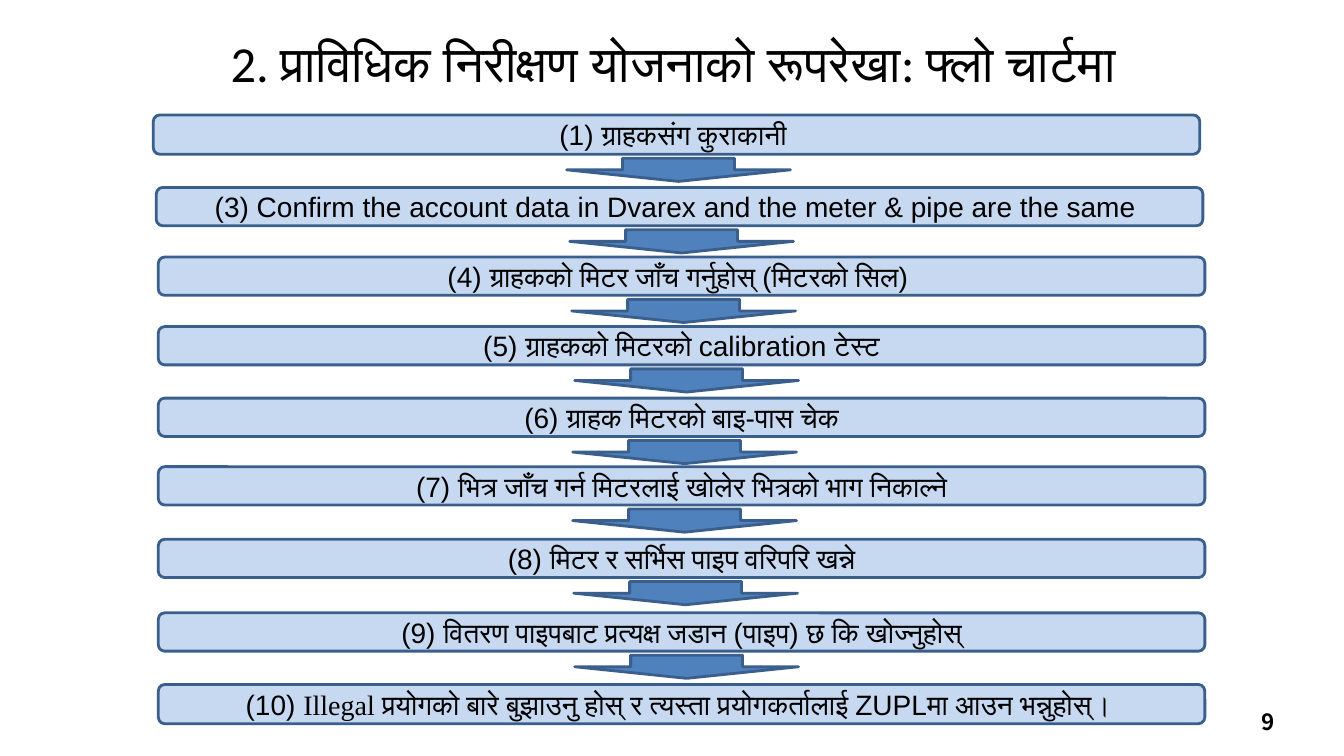
import pptx
import pptx.util
import pptx.dml.color
import pptx.enum.shapes
import pptx.enum.text

Inches = pptx.util.Inches
Pt = pptx.util.Pt
ALIGN = pptx.enum.text.PP_ALIGN
SHAPE = pptx.enum.shapes.MSO_SHAPE

COLOURS = {"text": "000000", "step": "C6D9F1", "arrow": "4F81BD", "outline": "3A5F8C"}


def add_block(kind, left, top, width, height, fill):
    block = page.shapes.add_shape(kind, Inches(left), Inches(top), Inches(width), Inches(height))
    block.shadow.inherit = False
    block.fill.solid()
    block.fill.fore_color.rgb = pptx.dml.color.RGBColor.from_string(COLOURS[fill])
    block.line.color.rgb = pptx.dml.color.RGBColor.from_string(COLOURS["outline"])
    block.line.width = Pt(2)
    return block


def write_text(box, pieces, size, align, bold=False):
    frame = box.text_frame
    frame.word_wrap = True
    frame.vertical_anchor = pptx.enum.text.MSO_ANCHOR.MIDDLE
    para = frame.paragraphs[0]
    para.alignment = align
    for text, font in pieces:
        span = para.add_run()
        span.text = text
        span.font.name = font
        span.font.size = Pt(size)
        span.font.bold = bold
        span.font.color.rgb = pptx.dml.color.RGBColor.from_string(COLOURS["text"])


deck = pptx.Presentation()
deck.slide_width = Inches(13.33)
deck.slide_height = Inches(7.5)
page = deck.slides.add_slide(deck.slide_layouts[5])

# Title
title = page.shapes.title
title.left, title.top = Inches(1.07), Inches(0.3)
title.width, title.height = Inches(11.21), Inches(0.64)
write_text(title, [("2. प्राविधिक निरीक्षण योजनाको रूपरेखा: फ्लो चार्टमा", "Calibri")], 36, ALIGN.CENTER)

# Steps of the flow chart: left, top, height, text pieces
steps = [
    (1.52, 1.14, 0.39, [("(1) ग्राहकसंग कुराकानी ", "Arial")]),
    (1.55, 1.86, 0.38,
     [("(3) Confirm the account data in Dvarex and the meter & pipe are the same ", "Arial")]),
    (1.57, 2.55, 0.38, [("(4) ग्राहकको मिटर जाँच गर्नुहोस् (मिटरको सिल) ", "Arial")]),
    (1.57, 3.24, 0.38, [("(5) ग्राहकको मिटरको calibration टेस्ट", "Arial")]),
    (1.57, 3.95, 0.38, [("(6) ग्राहक मिटरको बाइ-पास चेक", "Arial")]),
    (1.57, 4.63, 0.38, [("(7) भित्र जाँच गर्न मिटरलाई खोलेर भित्रको भाग निकाल्ने", "Arial")]),
    (1.57, 5.35, 0.38, [("(8) मिटर र सर्भिस पाइप वरिपरि खन्ने", "Arial")]),
    (1.57, 6.08, 0.38, [("(9) वितरण पाइपबाट प्रत्यक्ष जडान (पाइप) छ कि खोज्नुहोस्", "Arial")]),
    (1.57, 6.79, 0.39,
     [("(10) ", "Arial"), ("Illegal ", "Times New Roman"),
      ("प्रयोगको बारे बुझाउनु होस् र त्यस्ता प्रयोगकर्तालाई ZUPLमा आउन भन्नुहोस्। ", "Arial")]),
]
for left, top, height, pieces in steps:
    step = add_block(SHAPE.FLOWCHART_ALTERNATE_PROCESS, left, top, 10.38, height, "step")
    write_text(step, pieces, 20, ALIGN.CENTER)

# An arrow just below every step but the last
arrow_lefts = [5.62, 5.65, 5.67, 5.7, 5.68, 5.68, 5.69, 5.7]
for arrow_left, (left, top, height, pieces) in zip(arrow_lefts, steps):
    add_block(SHAPE.DOWN_ARROW, arrow_left, top + height + 0.04, 2.22, 0.23, "arrow")

# Page number
number = page.shapes.add_textbox(Inches(10.41), Inches(6.96), Inches(2.33), Inches(0.4))
write_text(number, [("9", "Noto Sans CJK JP")], 16, ALIGN.RIGHT, bold=True)

deck.save("out.pptx")
